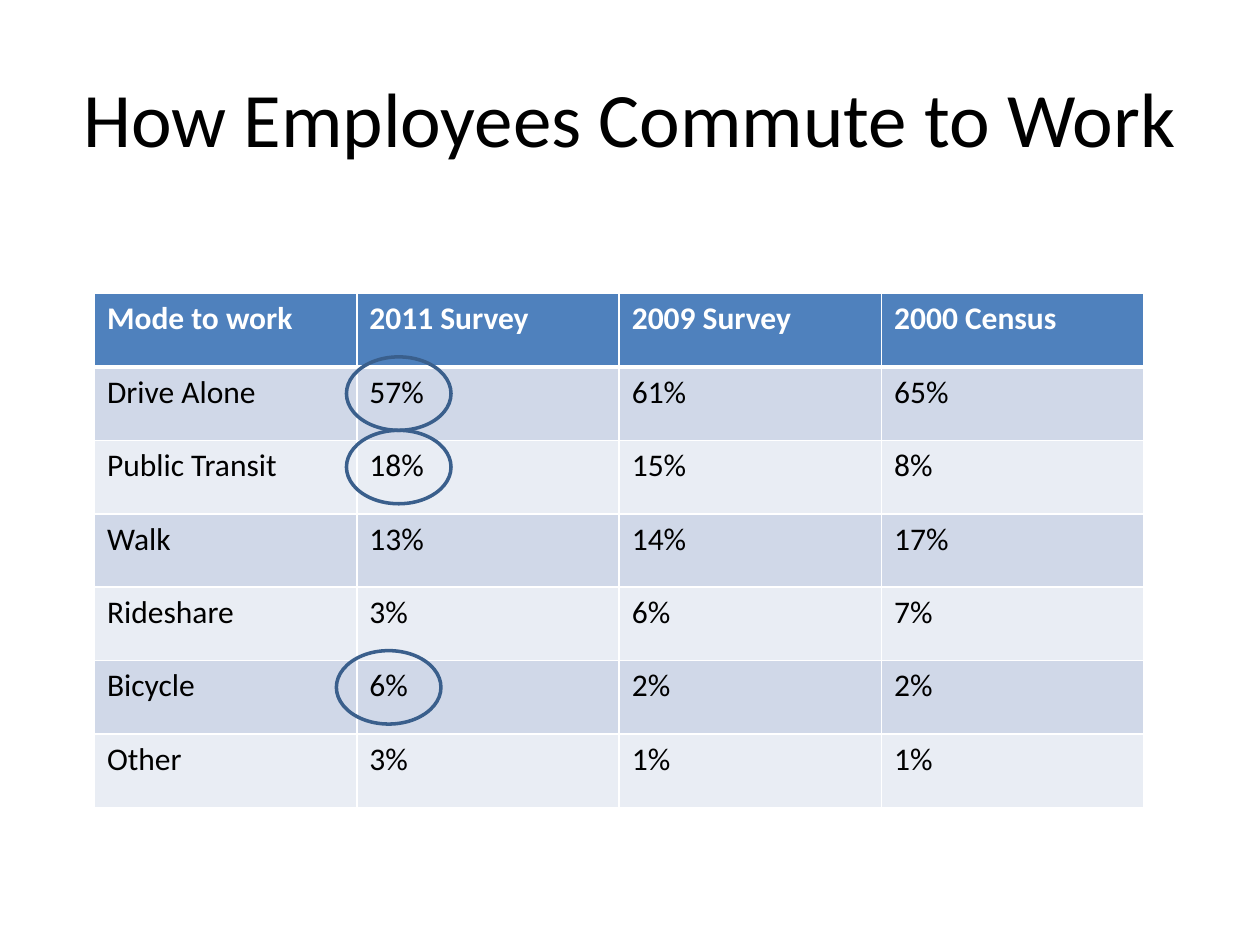
from dataclasses import dataclass

from lxml import etree
from pptx import Presentation
from pptx.dml.color import RGBColor
from pptx.enum.shapes import MSO_SHAPE
from pptx.enum.text import MSO_ANCHOR, PP_ALIGN
from pptx.oxml.ns import qn
from pptx.slide import Slide
from pptx.table import _Cell
from pptx.text.text import _Paragraph
from pptx.util import Inches, Pt

ELLIPSE = MSO_SHAPE.OVAL
MIDDLE = MSO_ANCHOR.MIDDLE
CENTER = PP_ALIGN.CENTER

FONT = "Calibri"
BLACK = "000000"
WHITE = "FFFFFF"
HEADER_FILL = "4F81BD"
BAND_FILLS = ("E9EDF4", "D0D8E8")
HIGHLIGHT_LINE = "3A5F8C"

TABLE_LEFT, TABLE_TOP = 0.75, 2.33
TABLE_WIDTH, TABLE_HEIGHT = 8.33, 4.08
HIGHLIGHT_WIDTH, HIGHLIGHT_RISE = 0.83, 0.08

COMMUTE_ROWS = (
    ("Mode to work", "2011 Survey", "2009 Survey", "2000 Census"),
    ("Drive Alone", "57%", "61%", "65%"),
    ("Public Transit", "18%", "15%", "8%"),
    ("Walk", "13%", "14%", "17%"),
    ("Rideshare", "3%", "6%", "7%"),
    ("Bicycle", "6%", "2%", "2%"),
    ("Other", "3%", "1%", "1%"),
)
ROW_HEIGHT = TABLE_HEIGHT / len(COMMUTE_ROWS)


@dataclass(frozen=True)
class Highlight:
    row: int
    left: float


HIGHLIGHTS = (Highlight(5, 2.67), Highlight(2, 2.75), Highlight(1, 2.75))


def color(value: str) -> RGBColor:
    return RGBColor.from_string(value)


def add_run(paragraph: _Paragraph, text: str, size: float, text_color: str, bold: bool = False) -> None:
    run = paragraph.add_run()
    run.text = text
    run.font.name = FONT
    run.font.size = Pt(size)
    run.font.bold = bold
    run.font.color.rgb = color(text_color)


def add_title(slide: Slide, text: str) -> None:
    shape = slide.shapes.add_textbox(Inches(0.5), Inches(0.3), Inches(9), Inches(1.25))
    frame = shape.text_frame
    frame.word_wrap = True
    frame.vertical_anchor = MIDDLE
    paragraph = frame.paragraphs[0]
    paragraph.alignment = CENTER
    add_run(paragraph, text, 44, BLACK)


def set_borders(cell: _Cell, top: float, bottom: float) -> None:
    properties = cell._tc.get_or_add_tcPr()
    for side, width in (("lnL", 1), ("lnR", 1), ("lnT", top), ("lnB", bottom)):
        line = etree.SubElement(properties, qn(f"a:{side}"), w=str(Pt(width)))
        fill = etree.SubElement(line, qn("a:solidFill"))
        etree.SubElement(fill, qn("a:srgbClr"), val=WHITE)


def fill_cell(cell: _Cell, text: str, row: int) -> None:
    is_header = row == 0
    set_borders(cell, top=3 if row == 1 else 1, bottom=3 if is_header else 1)
    cell.fill.solid()
    cell.fill.fore_color.rgb = color(HEADER_FILL if is_header else BAND_FILLS[row % 2])
    add_run(cell.text_frame.paragraphs[0], text, 18, WHITE if is_header else BLACK, is_header)


def add_commute_table(slide: Slide) -> None:
    table = slide.shapes.add_table(
        len(COMMUTE_ROWS), len(COMMUTE_ROWS[0]),
        Inches(TABLE_LEFT), Inches(TABLE_TOP), Inches(TABLE_WIDTH), Inches(TABLE_HEIGHT),
    ).table
    for row, texts in enumerate(COMMUTE_ROWS):
        for column, text in enumerate(texts):
            fill_cell(table.cell(row, column), text, row)


def add_highlight(slide: Slide, highlight: Highlight) -> None:
    top = TABLE_TOP - HIGHLIGHT_RISE + highlight.row * ROW_HEIGHT
    shape = slide.shapes.add_shape(
        ELLIPSE, Inches(highlight.left), Inches(top), Inches(HIGHLIGHT_WIDTH), Inches(ROW_HEIGHT)
    )
    shape.shadow.inherit = False
    shape.fill.background()
    shape.line.color.rgb = color(HIGHLIGHT_LINE)
    shape.line.width = Pt(2)


def main() -> None:
    presentation = Presentation()
    presentation.slide_width = Inches(10)
    presentation.slide_height = Inches(7.5)
    slide = presentation.slides.add_slide(presentation.slide_layouts[6])
    add_title(slide, "How Employees Commute to Work")
    add_commute_table(slide)
    for highlight in HIGHLIGHTS:
        add_highlight(slide, highlight)
    presentation.save("out.pptx")


if __name__ == "__main__":
    main()
